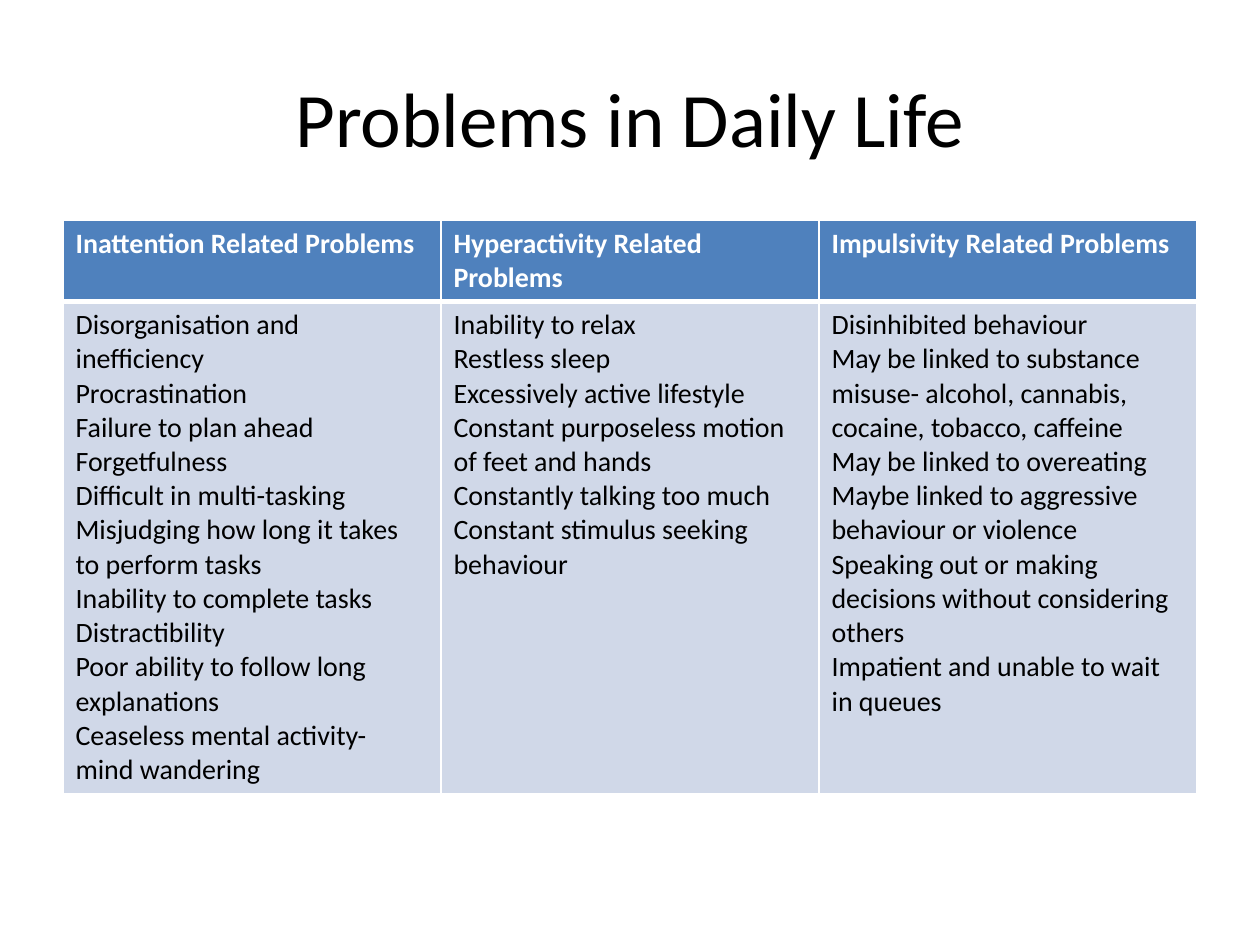
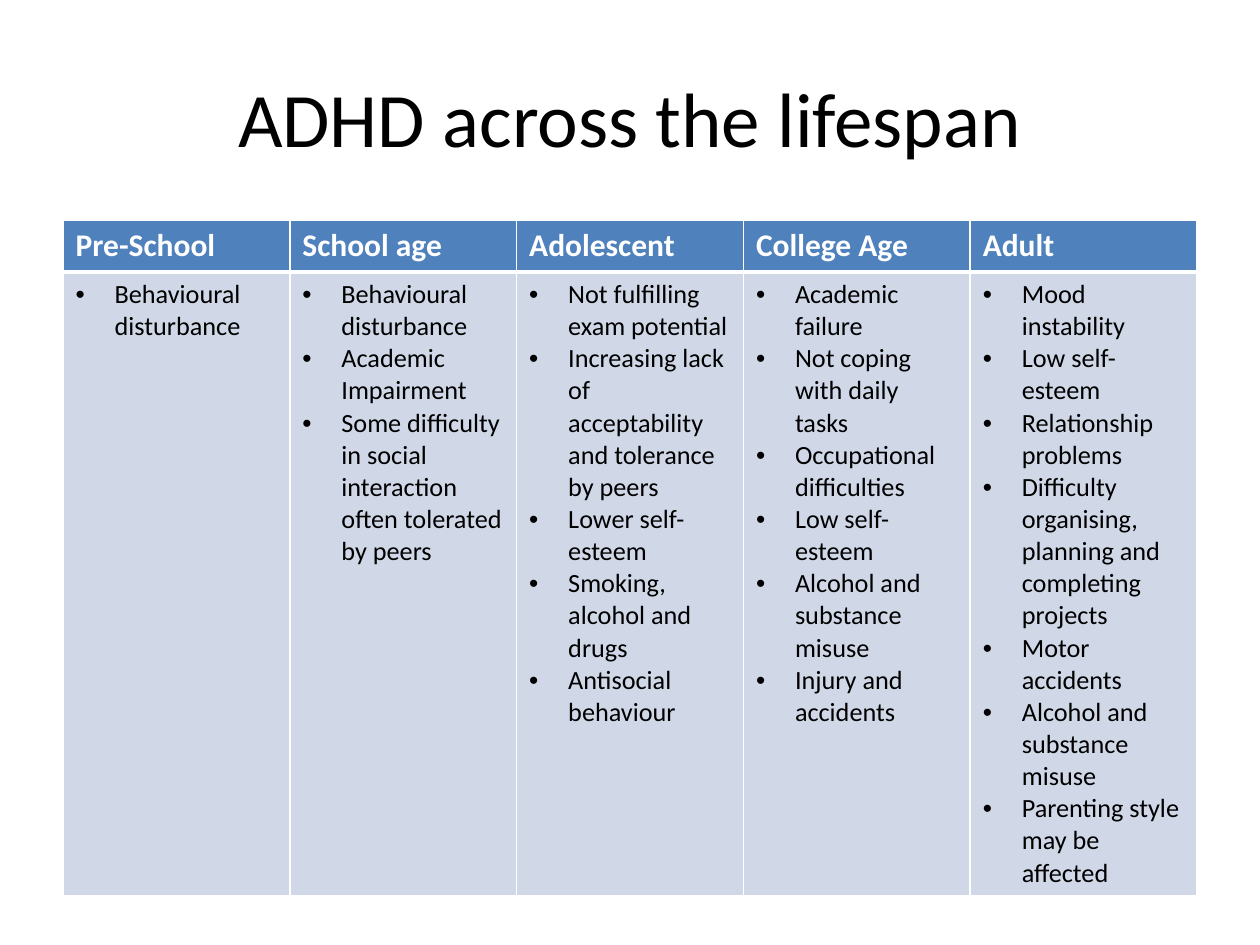
from lxml import etree
from pptx import Presentation
from pptx.dml.color import RGBColor
from pptx.enum.text import MSO_ANCHOR as Anchor, PP_ALIGN as Align
from pptx.oxml.ns import qn
from pptx.util import Pt

PX = 9144  # EMU per px, 100 px to the inch
FONT = "Calibri"
COLOURS = {"page": "FFFFFF", "text": "000000", "header": "4F81BD",
           "body": "D0D8E8", "header text": "FFFFFF", "rule": "FFFFFF"}
TITLE_BOX = {"left": 50, "top": 30, "width": 900, "height": 125}
TABLE_LEFT, TABLE_TOP, TABLE_WIDTH = 50, 175, 900
BULLET_INDENT = 31
THIN, THICK = 1, 3  # rule widths in points

DAILY_LIFE = {
    "Inattention Related Problems": [
        "Disorganisation and inefficiency",
        "Procrastination",
        "Failure to plan ahead",
        "Forgetfulness",
        "Difficult in multi-tasking",
        "Misjudging how long it takes to perform tasks",
        "Inability to complete tasks",
        "Distractibility",
        "Poor ability to follow long explanations",
        "Ceaseless mental activity- mind wandering",
    ],
    "Hyperactivity Related Problems": [
        "Inability to relax",
        "Restless sleep",
        "Excessively active lifestyle",
        "Constant purposeless motion of feet and hands",
        "Constantly talking too much",
        "Constant stimulus seeking behaviour",
    ],
    "Impulsivity Related Problems": [
        "Disinhibited behaviour",
        "May be linked to substance misuse- alcohol, cannabis, cocaine, tobacco, caffeine",
        "May be linked to overeating",
        "Maybe linked to aggressive behaviour or violence",
        "Speaking out or making decisions without considering others",
        "Impatient and unable to wait in queues",
    ],
}

LIFESPAN = {
    "Pre-School": ["Behavioural disturbance"],
    "School age": [
        "Behavioural disturbance",
        "Academic Impairment",
        "Some difficulty in social interaction often tolerated by peers",
    ],
    "Adolescent": [
        "Not fulfilling exam potential",
        "Increasing lack of acceptability and tolerance by peers",
        "Lower self-esteem",
        "Smoking, alcohol and drugs",
        "Antisocial behaviour",
    ],
    "College Age": [
        "Academic failure",
        "Not coping with daily tasks",
        "Occupational difficulties",
        "Low self-esteem",
        "Alcohol and substance misuse",
        "Injury and accidents",
    ],
    "Adult": [
        "Mood instability",
        "Low self-esteem",
        "Relationship problems",
        "Difficulty organising, planning and completing projects",
        "Motor accidents",
        "Alcohol and substance misuse",
        "Parenting style may be affected",
    ],
}


def colour(name):
    return RGBColor.from_string(COLOURS[name])


def write(para, text, size, colour_name, bold=False):
    span = para.add_run()
    span.text = text
    values = {"name": FONT, "size": Pt(size), "bold": bold}
    for key, value in values.items():
        setattr(span.font, key, value)
    span.font.color.rgb = colour(colour_name)


def add_page(deck, title):
    """Add a title-only slide with the shared title style."""
    page = deck.slides.add_slide(deck.slide_layouts[5])
    page.background.fill.solid()
    page.background.fill.fore_color.rgb = colour("page")
    box = page.shapes.title
    for side, length in TITLE_BOX.items():
        setattr(box, side, length * PX)
    box.text_frame.vertical_anchor = Anchor.MIDDLE
    para = box.text_frame.paragraphs[0]
    para.alignment = Align.CENTER
    write(para, title, 44, "text")
    return page


def add_bullet(para):
    properties = para._p.get_or_add_pPr()
    properties.set("marL", str(BULLET_INDENT * PX))
    properties.set("indent", str(-BULLET_INDENT * PX))
    etree.SubElement(properties, qn("a:buFont"), typeface="Arial")
    etree.SubElement(properties, qn("a:buChar"), char="•")


def rule_cell(cell, top, bottom):
    """Put the four border lines ahead of the cell's fill."""
    properties = cell._tc.get_or_add_tcPr()
    widths = {"a:lnL": THIN, "a:lnR": THIN, "a:lnT": top, "a:lnB": bottom}
    for place, (tag, width) in enumerate(widths.items()):
        line = etree.Element(qn(tag), w=str(Pt(width)))
        fill = etree.SubElement(line, qn("a:solidFill"))
        etree.SubElement(fill, qn("a:srgbClr"), val=COLOURS["rule"])
        properties.insert(place, line)


def fill_cell(cell, lines, fill, top, bottom, bullets=False, **text_format):
    cell.fill.solid()
    cell.fill.fore_color.rgb = colour(fill)
    rule_cell(cell, top, bottom)
    frame = cell.text_frame
    for number, line in enumerate(lines):
        para = frame.add_paragraph() if number else frame.paragraphs[0]
        if bullets:
            add_bullet(para)
        write(para, line, **text_format)


def add_list_table(page, columns, row_heights, header_size, body_size, bullets=False):
    """Add a table with one headed list in each equal column."""
    table = page.shapes.add_table(
        2, len(columns), TABLE_LEFT * PX, TABLE_TOP * PX,
        TABLE_WIDTH * PX, sum(row_heights) * PX).table
    table.horz_banding = False
    for row, height in zip(table.rows, row_heights):
        row.height = height * PX
    for index, (heading, items) in enumerate(columns.items()):
        table.columns[index].width = TABLE_WIDTH * PX // len(columns)
        fill_cell(table.cell(0, index), [heading], "header", THIN, THICK,
                  size=header_size, colour_name="header text", bold=True)
        fill_cell(table.cell(1, index), items, "body", THICK, THIN, bullets,
                  size=body_size, colour_name="text")


def main():
    deck = Presentation()
    deck.slide_width, deck.slide_height = 1000 * PX, 750 * PX

    # Problems grouped by symptom
    page = add_page(deck, "Problems in Daily Life")
    add_list_table(page, DAILY_LIFE, (64, 383), header_size=16, body_size=16)

    # Problems grouped by age
    page = add_page(deck, "ADHD across the lifespan")
    add_list_table(page, LIFESPAN, (41, 485), header_size=18, body_size=15, bullets=True)

    deck.save("out.pptx")


if __name__ == "__main__":
    main()
